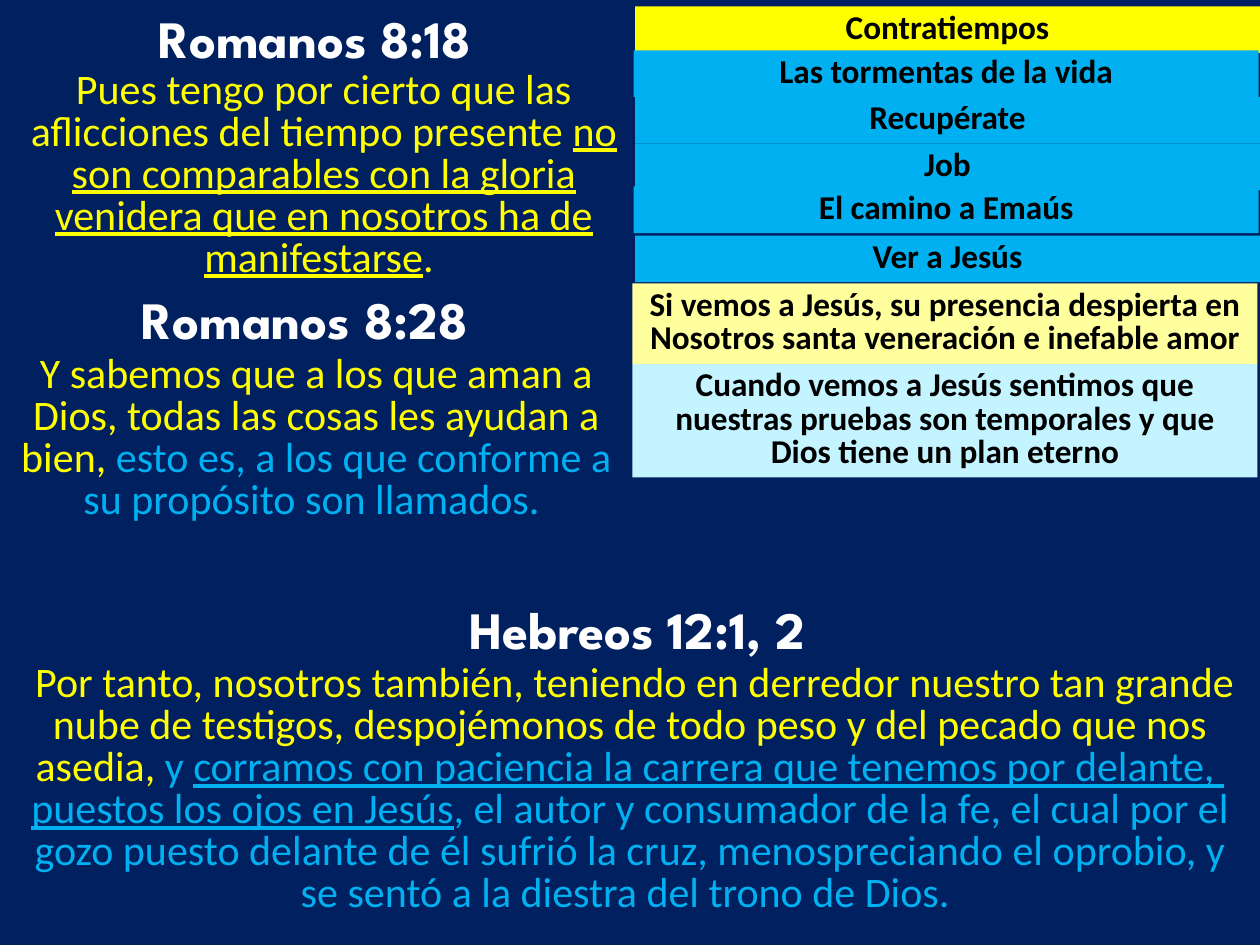
import pptx
import pptx.dml.color
import pptx.enum.shapes
import pptx.enum.text
import pptx.util
from pptx.util import Inches

COLORS = {
    "navy": "002060",
    "white": "FFFFFF",
    "black": "000000",
    "yellow": "FFFF00",
    "blue": "00B0F0",
    "cream": "FFFF9E",
    "ice": "C3F4FF",
}

# Offset from the outline's left and top, height, fill, lines
TOPICS = [
    (0.02, 0, 0.37, "yellow", ["Contratiempos"]),
    (0.01, 0.35, 0.37, "blue", ["Las tormentas de la vida"]),
    (0.02, 0.72, 0.37, "blue", ["Recupérate"]),
    (0.02, 1.09, 0.37, "blue", ["Job"]),
    (0.01, 1.43, 0.37, "blue", ["El camino a Emaús"]),
    (0.02, 1.82, 0.37, "blue", ["Ver a Jesús"]),
    (0, 2.2, 0.64, "cream", ["Si vemos a Jesús, su presencia despierta en",
                             "Nosotros santa veneración e inefable amor"]),
    (0, 2.84, 0.9, "ice", ["Cuando vemos a Jesús sentimos que nuestras pruebas "
                           "son temporales y que Dios tiene un plan eterno"]),
]

# Verses are paragraphs of runs: text, color, underlined
ROMANS_8_18 = [[
    ("Pues tengo por cierto que las aflicciones del tiempo presente ", "yellow", False),
    ("no son comparables con la gloria venidera que en nosotros ha de manifestarse",
     "yellow", True),
    (". ", "yellow", False),
]]
ROMANS_8_28 = [[
    ("Y sabemos que a los que aman a Dios, todas las cosas les ayudan a bien, ",
     "yellow", False),
    ("esto es, a los que conforme a su propósito son llamados. ", "blue", False),
]]
HEBREWS_12 = [
    [
        (" Por tanto, nosotros también, teniendo en derredor nuestro tan grande nube de "
         "testigos, despojémonos de todo peso y del pecado que nos asedia, ",
         "yellow", False),
        ("y ", "blue", False),
        ("corramos con paciencia la carrera que tenemos por delante, ", "blue", True),
    ],
    [
        ("puestos los ojos en Jesús", "blue", True),
        (", el autor y consumador de la fe, el cual por el gozo puesto delante de él "
         "sufrió la cruz, menospreciando el oprobio, y se sentó a la diestra del trono "
         "de Dios. ", "blue", False),
    ],
]


def rgb(name):
    return pptx.dml.color.RGBColor.from_string(COLORS[name])


def write(frame, paragraphs, font, size, bold=False, spacing=None):
    """Fill a text frame with centered paragraphs of (text, color, underlined) runs."""
    frame.word_wrap = True
    frame.vertical_anchor = pptx.enum.text.MSO_ANCHOR.TOP
    for index, runs in enumerate(paragraphs):
        paragraph = frame.add_paragraph() if index else frame.paragraphs[0]
        paragraph.alignment = pptx.enum.text.PP_ALIGN.CENTER
        if spacing:
            paragraph.line_spacing = pptx.util.Pt(spacing)
        for text, color, underlined in runs:
            run = paragraph.add_run()
            run.text = text
            run.font.name = font
            run.font.size = pptx.util.Pt(size)
            run.font.bold = bold
            run.font.underline = underlined
            run.font.color.rgb = rgb(color)


def add_outline(slide, left, top, width):
    for dx, dy, height, fill, lines in TOPICS:
        topic = slide.shapes.add_shape(
            pptx.enum.shapes.MSO_SHAPE.RECTANGLE,
            Inches(left + dx), Inches(top + dy), Inches(width), Inches(height))
        topic.shadow.inherit = False
        topic.fill.solid()
        topic.fill.fore_color.rgb = rgb(fill)
        topic.line.fill.background()
        write(topic.text_frame, [[(line, "black", False)] for line in lines],
              "Calibri", 19, bold=True, spacing=19)


def add_passage(slide, box, heading_dx, verse_dy, reference, verse):
    """Place a reference heading, shifted by heading_dx, and its verse below it."""
    left, top, width, height = box
    heading = slide.shapes.add_textbox(
        Inches(left + heading_dx), Inches(top), Inches(4.65), Inches(0.61))
    write(heading.text_frame, [[(reference, "white", False)]],
          "League Spartan", 30, bold=True)
    body = slide.shapes.add_textbox(
        Inches(left), Inches(top + verse_dy), Inches(width), Inches(height - verse_dy))
    write(body.text_frame, verse, "Calibri", 24, spacing=24)


def main():
    deck = pptx.Presentation()
    deck.slide_width, deck.slide_height = Inches(10), Inches(7.5)
    slide = deck.slides.add_slide(deck.slide_layouts[6])
    slide.background.fill.solid()
    slide.background.fill.fore_color.rgb = rgb("navy")

    add_outline(slide, 5.02, 0.05, 4.96)
    add_passage(slide, (0.04, 0, 5.06, 2.3), 0.08, 0.51, " Romanos 8:18", ROMANS_8_18)
    add_passage(slide, (0, 2.23, 5.02, 1.99), 0.04, 0.54, " Romanos 8:28", ROMANS_8_28)
    add_passage(slide, (0.04, 4.69, 9.92, 2.66), 2.64, 0.53, " Hebreos 12:1, 2", HEBREWS_12)
    deck.save("out.pptx")


if __name__ == "__main__":
    main()
